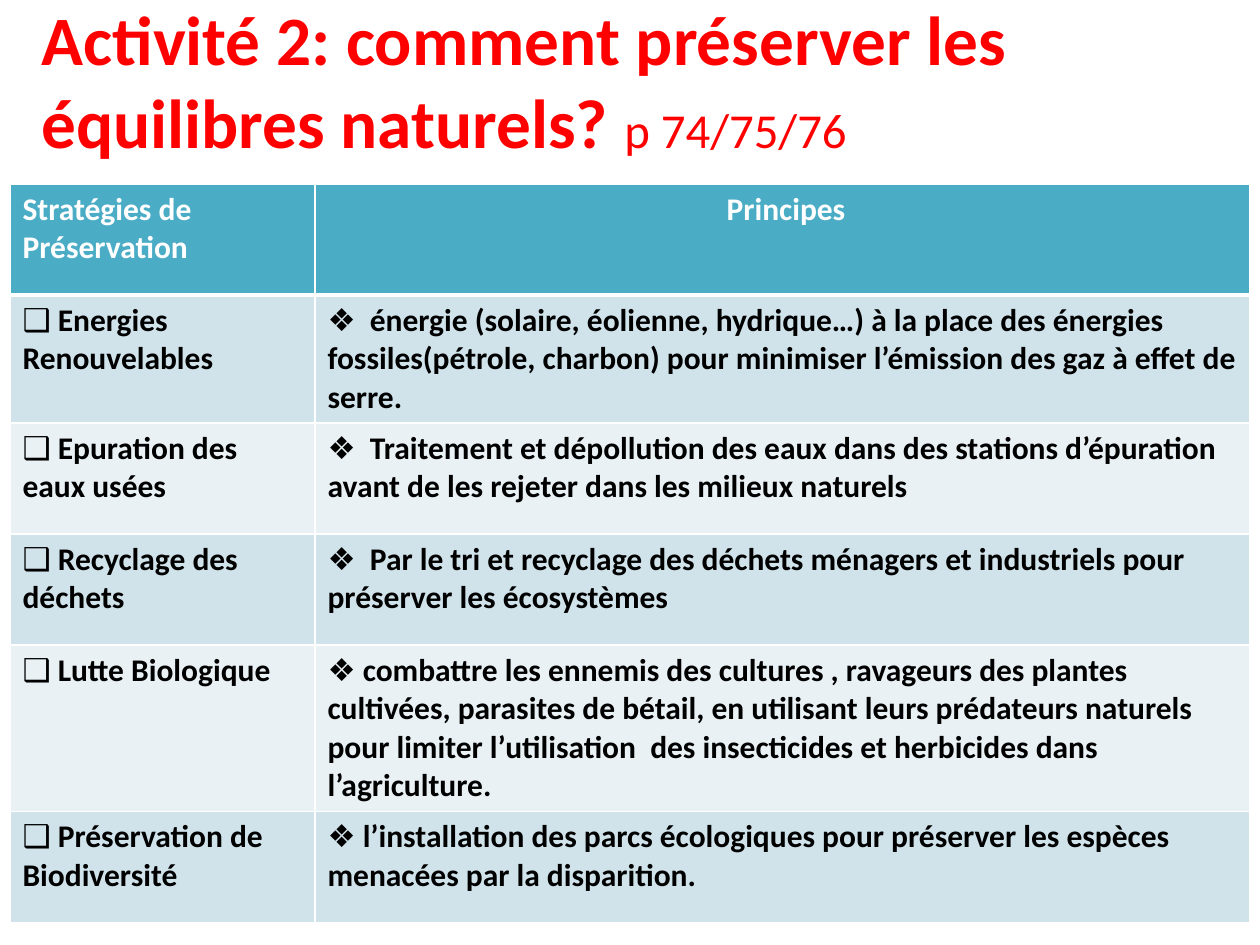
from typing import NamedTuple

from lxml import etree
from pptx import Presentation
from pptx.dml.color import RGBColor
from pptx.enum.text import MSO_ANCHOR, MSO_AUTO_SIZE, PP_ALIGN
from pptx.oxml.ns import qn
from pptx.util import Pt

PX = 914400 // 126
LEFT, CENTER = PP_ALIGN.LEFT, PP_ALIGN.CENTER
FONT = "Calibri"
COLORS = {
    "title": "FF0000",
    "header": "4BACC6",
    "band_dark": "D0E3EA",
    "band_light": "E9F1F5",
    "white": "FFFFFF",
    "text": "000000",
}
TITLE_BOX = (29, 0, 1168, 158)
TABLE_LEFT, TABLE_TOP, ROW_HEIGHT = 10, 184, 111
COL_WIDTHS = (305, 935)
BULLETS = ("❑", "❖")


class Strategy(NamedTuple):
    name: str
    principle: str


HEADER = Strategy("Stratégies de  Préservation", " Principes")
STRATEGIES = (
    Strategy(" Energies Renouvelables",
             "  énergie (solaire, éolienne, hydrique…) à la place des énergies "
             "fossiles(pétrole, charbon) pour minimiser l’émission des gaz à "
             "effet de serre."),
    Strategy(" Epuration des eaux usées",
             "  Traitement et dépollution des eaux dans des stations "
             "d’épuration avant de les rejeter dans les milieux naturels"),
    Strategy(" Recyclage des déchets",
             "  Par le tri et recyclage des déchets ménagers et industriels "
             "pour préserver les écosystèmes"),
    Strategy(" Lutte Biologique",
             " combattre les ennemis des cultures , ravageurs des plantes "
             "cultivées, parasites de bétail, en utilisant leurs prédateurs "
             "naturels pour limiter l’utilisation  des insecticides et "
             "herbicides dans l’agriculture."),
    Strategy(" Préservation de Biodiversité",
             " l’installation des parcs écologiques pour préserver les espèces "
             "menacées par la disparition."),
)


def rgb(name: str) -> RGBColor:
    return RGBColor.from_string(COLORS[name])


def add_text(p, text: str, *, size: float, color: str, bold: bool = True,
             align=LEFT, bullet: str = "") -> None:
    p.alignment = align
    r = p.add_run()
    r.text = text
    r.font.name, r.font.size, r.font.bold = FONT, Pt(size), bold
    r.font.color.rgb = rgb(color)
    if bullet:
        pPr = p._p.get_or_add_pPr()
        pPr.set("marL", "0")
        pPr.set("indent", "0")
        etree.SubElement(pPr, qn("a:buFont")).set("typeface", FONT)
        etree.SubElement(pPr, qn("a:buChar")).set("char", bullet)


def add_borders(cell, *, top: int = 1, bottom: int = 1) -> None:
    """Draw white cell borders; widths are in points."""
    tcPr = cell._tc.get_or_add_tcPr()
    for side, width in (("L", 1), ("R", 1), ("T", top), ("B", bottom)):
        ln = etree.SubElement(tcPr, qn(f"a:ln{side}"), w=str(Pt(width)))
        fill = etree.SubElement(ln, qn("a:solidFill"))
        etree.SubElement(fill, qn("a:srgbClr"), val=COLORS["white"])


def add_title(s) -> None:
    sp = s.shapes.title
    sp.left, sp.top, sp.width, sp.height = (v * PX for v in TITLE_BOX)
    tf = sp.text_frame
    tf.word_wrap = True
    tf.auto_size = MSO_AUTO_SIZE.NONE
    tf.vertical_anchor = MSO_ANCHOR.MIDDLE
    p = tf.paragraphs[0]
    add_text(p, "Activité 2: comment préserver les équilibres naturels? ",
             size=39.6, color="title")
    add_text(p, "p 74/75/76", size=27.9, color="title", bold=False)


def add_strategy_table(s) -> None:
    rows = (HEADER, *STRATEGIES)
    table = s.shapes.add_table(
        len(rows), len(COL_WIDTHS), TABLE_LEFT * PX, TABLE_TOP * PX,
        sum(COL_WIDTHS) * PX, len(rows) * ROW_HEIGHT * PX).table
    for column, width in zip(table.columns, COL_WIDTHS):
        column.width = width * PX
    for i, row in enumerate(rows):
        is_header = i == 0
        band = "header" if is_header else "band_dark" if i % 2 else "band_light"
        for j, text in enumerate(row):
            cell = table.cell(i, j)
            add_borders(cell, top=3 if i == 1 else 1,
                        bottom=3 if is_header else 1)
            cell.fill.solid()
            cell.fill.fore_color.rgb = rgb(band)
            add_text(cell.text_frame.paragraphs[0], text, size=18,
                     color="white" if is_header else "text",
                     align=CENTER if is_header and j == 1 else LEFT,
                     bullet="" if is_header else BULLETS[j])


def main() -> None:
    prs = Presentation()
    prs.slide_width, prs.slide_height = 1260 * PX, 945 * PX
    s = prs.slides.add_slide(prs.slide_layouts[5])
    add_title(s)
    add_strategy_table(s)
    prs.save("out.pptx")


if __name__ == "__main__":
    main()
